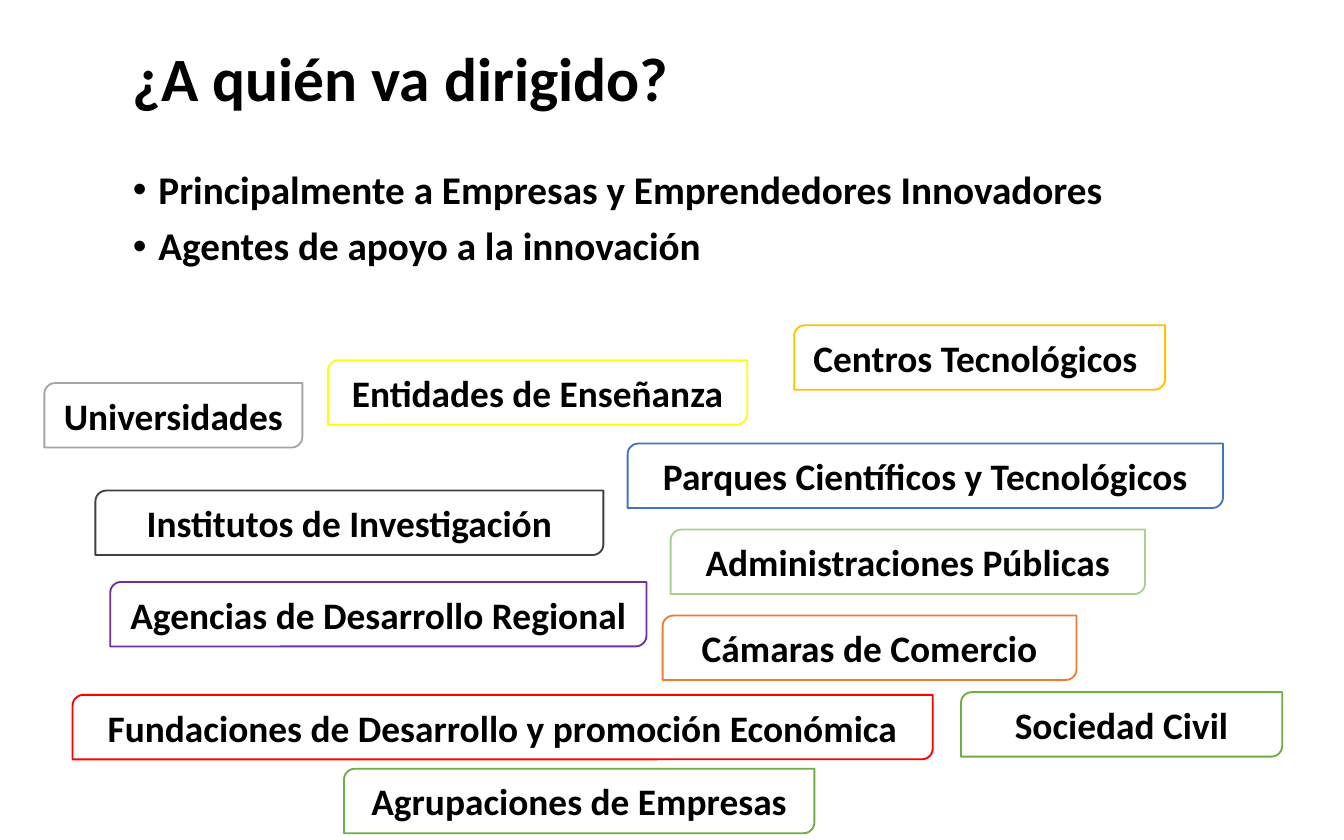
from lxml import etree
from pptx import Presentation
from pptx import util as u
from pptx.dml.color import RGBColor
from pptx.enum import shapes, text
from pptx.oxml import ns

CELL = u.Inches(0.1)
COLUMNS, ROWS = 100, 62.5
LABEL_ROWS = 4.8

BLACK = RGBColor(0x00, 0x00, 0x00)
WHITE = RGBColor(0xFF, 0xFF, 0xFF)
PURPLE = RGBColor(0x70, 0x30, 0xA0)
BLUE = RGBColor(0x44, 0x72, 0xC4)
GRAY = RGBColor(0xA5, 0xA5, 0xA5)
GOLD = RGBColor(0xFF, 0xC0, 0x00)
CHARCOAL = RGBColor(0x40, 0x40, 0x40)
RED = RGBColor(0xFF, 0x00, 0x00)
LIGHT_GREEN = RGBColor(0xA9, 0xD1, 0x8E)
YELLOW = RGBColor(0xFF, 0xFF, 0x00)
ORANGE = RGBColor(0xED, 0x7D, 0x31)
GREEN = RGBColor(0x70, 0xAD, 0x47)

TITLE = "¿A quién va dirigido?"
AUDIENCES = [
    "Principalmente a Empresas y Emprendedores Innovadores",
    "Agentes de apoyo a la innovación",
]
AGENTS = [
    ("Agencias de Desarrollo Regional", 8.2, 43.3, 39.9, PURPLE),
    ("Parques Científicos y Tecnológicos", 46.7, 33, 44.3, BLUE),
    ("Universidades", 3.3, 28.5, 19.2, GRAY),
    ("Centros Tecnológicos ", 59.1, 24.2, 27.6, GOLD),
    ("Institutos de Investigación", 7.1, 36.5, 37.8, CHARCOAL),
    ("Fundaciones de Desarrollo y promoción Económica", 5.4, 51.7, 64, RED),
    ("Administraciones Públicas", 49.9, 39.4, 35.3, LIGHT_GREEN),
    ("Entidades de Enseñanza", 24.4, 26.8, 31.2, YELLOW),
    ("Cámaras de Comercio", 49.3, 45.8, 30.8, ORANGE),
    ("Agrupaciones de Empresas", 25.6, 57.2, 35, GREEN),
    ("Sociedad Civil", 71.5, 51.5, 23.9, GREEN),
]


def grid_box(column, row, columns, rows):
    """Return left, top, width and height of a block of grid cells."""
    return [round(cells * CELL) for cells in (column, row, columns, rows)]


def apply_format(target, values):
    """Set each attribute of the target from a dict."""
    for name, value in values.items():
        setattr(target, name, value)


def write_paragraph(paragraph, wording, size, **layout):
    """Write bold black text with the given paragraph layout."""
    paragraph.text = wording
    apply_format(paragraph, layout)
    apply_format(paragraph.font, {"name": "Calibri", "size": u.Pt(size), "bold": True})
    paragraph.font.color.rgb = BLACK


def add_bullet(paragraph):
    """Give the paragraph a hanging round bullet."""
    properties = paragraph._p.get_or_add_pPr()
    indent = u.Inches(0.19)
    properties.set("marL", str(indent))
    properties.set("indent", str(-indent))
    etree.SubElement(properties, ns.qn("a:buFont")).set("typeface", "Arial")
    etree.SubElement(properties, ns.qn("a:buChar")).set("char", "•")


def add_title(slide, box):
    """Place the slide title, centred vertically in its box."""
    frame = slide.shapes.add_textbox(*box).text_frame
    apply_format(frame, {"word_wrap": True, "vertical_anchor": text.MSO_ANCHOR.MIDDLE})
    write_paragraph(frame.paragraphs[0], TITLE, 33, line_spacing=0.9)


def add_audiences(slide, box):
    """Place the bulleted list of audiences."""
    frame = slide.shapes.add_textbox(*box).text_frame
    frame.word_wrap = True
    for index, wording in enumerate(AUDIENCES):
        paragraph = frame.add_paragraph() if index else frame.paragraphs[0]
        add_bullet(paragraph)
        write_paragraph(paragraph, wording, 21, line_spacing=0.9,
                        space_before=u.Pt(7.5 if index else 0))


def add_agent(slide, box, wording, color):
    """Place one outlined label naming a support agent."""
    shape = slide.shapes.add_shape(shapes.MSO_SHAPE.ROUND_2_DIAG_RECTANGLE, *box)
    shape.shadow.inherit = False
    shape.fill.solid()
    shape.fill.fore_color.rgb = WHITE
    shape.line.color.rgb = color
    shape.line.width = u.Pt(1)
    apply_format(shape.text_frame, {
        "word_wrap": True,
        "auto_size": text.MSO_AUTO_SIZE.SHAPE_TO_FIT_TEXT,
        "vertical_anchor": text.MSO_ANCHOR.MIDDLE,
    })
    write_paragraph(shape.text_frame.paragraphs[0], wording, 20,
                    alignment=text.PP_ALIGN.CENTER)


def main():
    """Build and save the presentation."""
    presentation = Presentation()
    apply_format(presentation, {
        "slide_width": round(COLUMNS * CELL),
        "slide_height": round(ROWS * CELL),
    })
    slide = presentation.slides.add_slide(presentation.slide_layouts[6])
    add_title(slide, grid_box(8.9, 0, 84.2, 12.1))
    add_audiences(slide, grid_box(8.9, 12.2, 84.2, 39.7))
    for wording, column, row, columns, color in AGENTS:
        add_agent(slide, grid_box(column, row, columns, LABEL_ROWS), wording, color)
    presentation.save("out.pptx")


if __name__ == "__main__":
    main()
